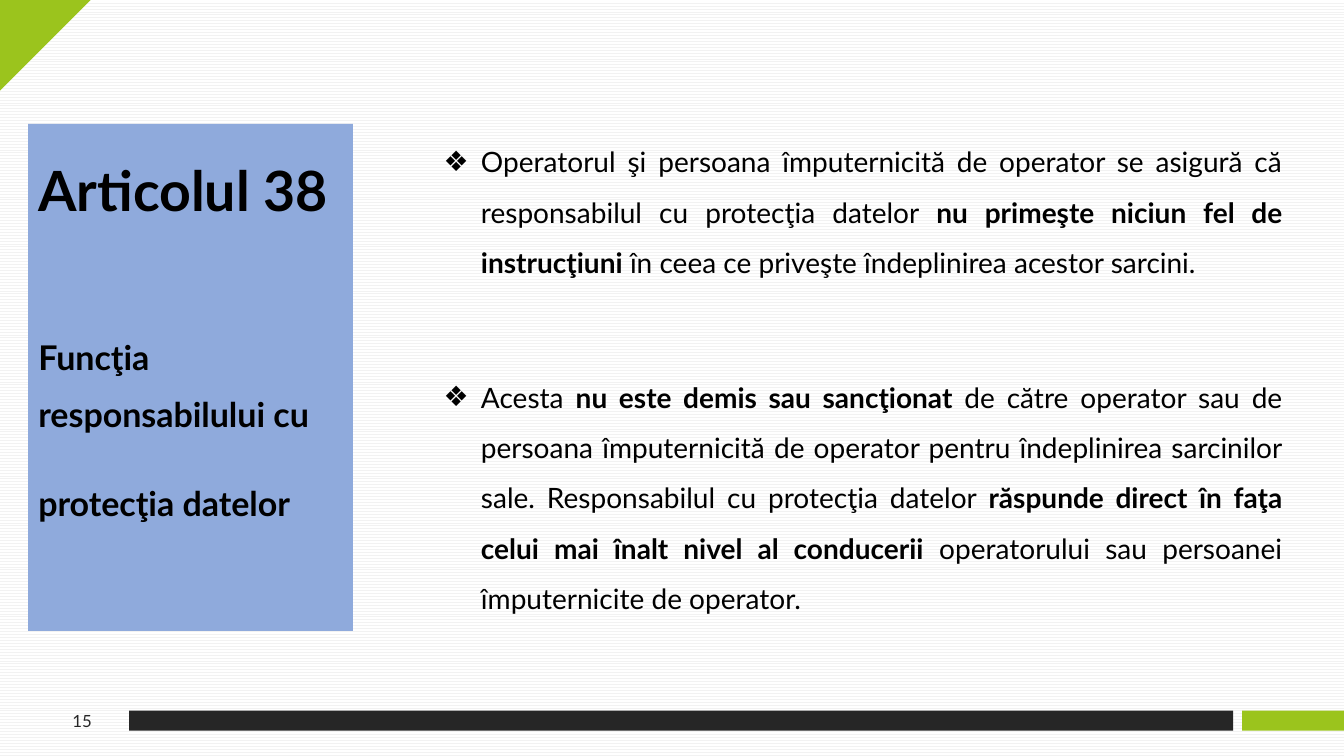
from lxml.etree import SubElement
from pptx import Presentation
from pptx.dml.color import RGBColor
from pptx.enum.dml import MSO_PATTERN
from pptx.enum.shapes import MSO_SHAPE
from pptx.enum.text import MSO_ANCHOR, MSO_AUTO_SIZE, PP_ALIGN
from pptx.oxml.ns import qn
from pptx.util import Inches, Pt

FONT = "Lato"
BLACK, DARK, GREEN, BLUE = "000000", "262626", "9BC41D", "8FAADC"


def rgb(color):
    return RGBColor.from_string(color)


def add_block(s, kind, x, y, w, h, color, rotation=0):
    sp = s.shapes.add_shape(kind, Inches(x), Inches(y), Inches(w), Inches(h))
    sp.fill.solid()
    sp.fill.fore_color.rgb = rgb(color)
    sp.line.fill.background()
    sp.shadow.inherit = False
    sp.rotation = rotation


def place(sp, x, y, w, h, anchor=MSO_ANCHOR.TOP):
    sp.left, sp.top, sp.width, sp.height = map(Inches, (x, y, w, h))
    tf = sp.text_frame
    tf.word_wrap = True
    tf.auto_size = MSO_AUTO_SIZE.NONE
    tf.vertical_anchor = anchor
    return tf


def add_run(p, text, size, bold=False, color=BLACK):
    r = p.add_run()
    r.text = text
    r.font.name, r.font.size, r.font.bold = FONT, Pt(size), bold
    r.font.color.rgb = rgb(color)


def add_paragraph(tf, runs, size, align=PP_ALIGN.LEFT, spacing=1.0,
                  before=0, after=0, color=BLACK, bullet=None):
    """Fill the first paragraph or append one; runs are (text, bold) pairs."""
    p = tf.paragraphs[0]
    if p.runs:
        p = tf.add_paragraph()
    p.alignment, p.line_spacing = align, spacing
    p.space_before, p.space_after = Pt(before), Pt(after)
    if bullet:
        pPr = p._p.get_or_add_pPr()
        pPr.set("marL", str(Inches(0.57)))
        pPr.set("indent", str(Inches(-0.37)))
        SubElement(pPr, qn("a:buChar")).set("char", bullet)
    for text, bold in runs:
        add_run(p, text, size, bold, color)


def main():
    prs = Presentation()
    prs.slide_width, prs.slide_height = Inches(13.33), Inches(7.5)
    s = prs.slides.add_slide(prs.slide_layouts[1])

    # Patterned background
    fill = s.background.fill
    fill.patterned()
    fill.pattern = MSO_PATTERN.ZIG_ZAG
    fill.fore_color.rgb, fill.back_color.rgb = rgb("F2F2F2"), rgb("FFFFFF")

    # Corner and footer bars
    add_block(s, MSO_SHAPE.RIGHT_TRIANGLE, 0, 0, 0.9, 0.9, GREEN, rotation=90)
    add_block(s, MSO_SHAPE.RECTANGLE, 1.28, 7.05, 10.95, 0.2, DARK)
    add_block(s, MSO_SHAPE.RECTANGLE, 12.32, 7.05, 1.01, 0.2, GREEN)

    # Page number
    number = s.shapes.add_textbox(0, 0, 0, 0)
    tf = place(number, 0.45, 6.95, 0.73, 0.4, MSO_ANCHOR.MIDDLE)
    add_paragraph(tf, [("15", False)], 12, PP_ALIGN.CENTER, color=DARK)

    # Title panel
    title = s.shapes.title
    title.fill.solid()
    title.fill.fore_color.rgb = rgb(BLUE)
    tf = place(title, 0.28, 1.23, 3.22, 5.03)
    for text, size, before in [("Articolul 38", 39.6, 0),
                               ("Funcţia responsabilului cu", 24.3, 70),
                               ("protecţia datelor", 24.3, 23)]:
        add_paragraph(tf, [(text, True)], size, spacing=1.4, before=before)

    # Bulleted provisions
    provisions = [
        [("Operatorul şi persoana împuternicită de operator se asigură că "
          "responsabilul cu protecţia datelor ", False),
         ("nu primeşte niciun fel de instrucţiuni", True),
         (" în ceea ce priveşte îndeplinirea acestor sarcini.", False)],
        [("Acesta ", False),
         ("nu este demis sau sancţionat ", True),
         ("de către operator sau de persoana împuternicită de operator pentru "
          "îndeplinirea sarcinilor sale. Responsabilul cu protecţia datelor ", False),
         ("răspunde direct în faţa celui mai înalt nivel al conducerii", True),
         (" operatorului sau persoanei împuternicite de operator.", False)],
    ]
    tf = place(s.placeholders[1], 4.1, 1.22, 8.72, 4.94)
    for i, runs in enumerate(provisions):
        add_paragraph(tf, runs, 20, PP_ALIGN.JUSTIFY, spacing=1.5,
                      before=54 * i, after=6, bullet="❖")

    prs.save("out.pptx")


if __name__ == "__main__":
    main()
